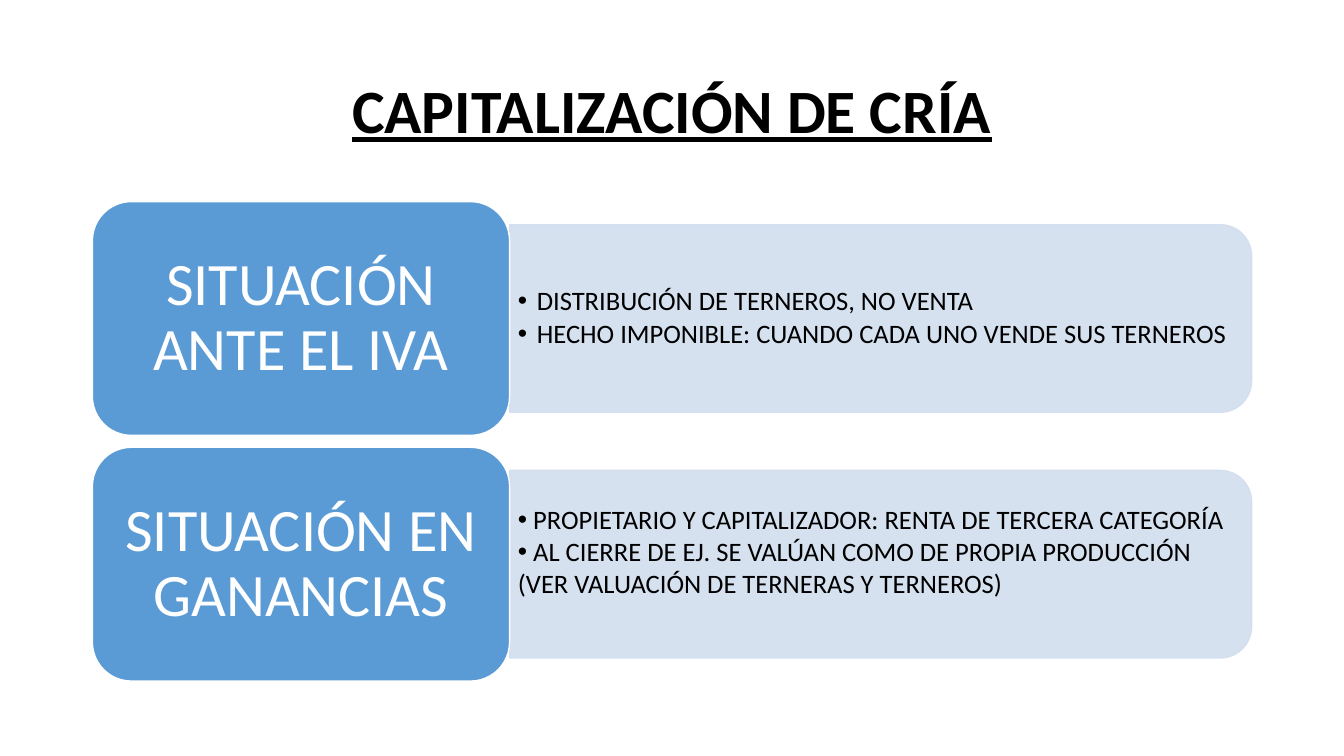
from pptx import Presentation
from pptx.dml.color import RGBColor
from pptx.enum.shapes import MSO_SHAPE
from pptx.enum.text import MSO_ANCHOR, PP_ALIGN
from pptx.util import Pt
from lxml.etree import SubElement
from pptx.oxml.ns import qn

BLACK = RGBColor(0x00, 0x00, 0x00)
WHITE = RGBColor(0xFF, 0xFF, 0xFF)
BLUE = RGBColor(0x5B, 0x9B, 0xD5)
PALE_BLUE = RGBColor(0xD2, 0xDE, 0xEF)

LABEL_LEFT, LABEL_TOP, LABEL_WIDTH, LABEL_HEIGHT = 66, 144, 298, 167
ROW_PITCH = 175.5
PANEL_WIDTH, PANEL_HEIGHT = 530, 134
PANEL_LEFT = LABEL_LEFT + LABEL_WIDTH
DETAIL_WIDTH, DETAIL_HEIGHT = 523.5, 121

# label, details, hanging indent, line spacing, space after, bottom inset
ROWS = [
    ("SITUACIÓN ANTE EL IVA",
     ["DISTRIBUCIÓN DE TERNEROS, NO VENTA",
      "HECHO IMPONIBLE: CUANDO CADA UNO VENDE SUS TERNEROS"],
     13.5, 0.9, 2.85, 3),
    ("SITUACIÓN EN GANANCIAS",
     [" PROPIETARIO Y CAPITALIZADOR: RENTA DE TERCERA CATEGORÍA",
      " AL CIERRE DE EJ. SE VALÚAN COMO DE PROPIA PRODUCCIÓN "
      "(VER VALUACIÓN DE TERNERAS Y TERNEROS)"],
     0, 1.0, 0, 22),
]


def style_text(paragraph, size, color):
    paragraph.font.name = "Calibri"
    paragraph.font.size = Pt(size)
    paragraph.font.color.rgb = color


def set_insets(frame, side, top, bottom):
    frame.word_wrap = True
    frame.vertical_anchor = MSO_ANCHOR.MIDDLE
    frame.margin_left = frame.margin_right = Pt(side)
    frame.margin_top, frame.margin_bottom = Pt(top), Pt(bottom)


presentation = Presentation()
presentation.slide_width, presentation.slide_height = Pt(960), Pt(540)
slide = presentation.slides.add_slide(presentation.slide_layouts[6])

# Title
title = slide.shapes.add_textbox(Pt(66), Pt(28.75), Pt(828), Pt(104.4))
set_insets(title.text_frame, 7.2, 3.6, 3.6)
heading = title.text_frame.paragraphs[0]
heading.text = "CAPITALIZACIÓN DE CRÍA"
heading.alignment = PP_ALIGN.CENTER
heading.line_spacing = 0.9
style_text(heading, 44, BLACK)
heading.font.bold = heading.font.underline = True

for row, (topic, points, indent, spacing, after, bottom) in enumerate(ROWS):
    top = LABEL_TOP + row * ROW_PITCH
    middle = top + LABEL_HEIGHT / 2

    # Pale panel, turned so that its rounded corners face right
    panel = slide.shapes.add_shape(
        MSO_SHAPE.ROUND_2_SAME_RECTANGLE,
        Pt(PANEL_LEFT + (PANEL_WIDTH - PANEL_HEIGHT) / 2),
        Pt(middle - PANEL_WIDTH / 2), Pt(PANEL_HEIGHT), Pt(PANEL_WIDTH))
    panel.rotation = 90
    panel.shadow.inherit = False
    panel.line.width = Pt(1)
    for paint in (panel.fill, panel.line.fill):
        paint.solid()
        paint.fore_color.rgb = PALE_BLUE
    for color in panel._element.spPr.iter(qn("a:srgbClr")):
        SubElement(color, qn("a:alpha"), val="90000")

    # Bulleted details
    details = slide.shapes.add_textbox(
        Pt(PANEL_LEFT), Pt(middle - DETAIL_HEIGHT / 2),
        Pt(DETAIL_WIDTH), Pt(DETAIL_HEIGHT))
    frame = details.text_frame
    set_insets(frame, 6, 3, bottom)
    for number, point in enumerate(points):
        item = frame.add_paragraph() if number else frame.paragraphs[0]
        item.text = point
        item.line_spacing = spacing
        item.space_after = Pt(after)
        style_text(item, 19, BLACK)
        properties = item._p.get_or_add_pPr()
        properties.set("marL", str(Pt(indent)))
        properties.set("indent", str(-Pt(indent)))
        SubElement(properties, qn("a:buFont"), typeface="Arial")
        SubElement(properties, qn("a:buChar"), char="•")
        # Bullet settings precede the default run settings
        properties.append(properties.find(qn("a:defRPr")))

    # Blue label
    label = slide.shapes.add_shape(
        MSO_SHAPE.ROUNDED_RECTANGLE, Pt(LABEL_LEFT), Pt(top),
        Pt(LABEL_WIDTH), Pt(LABEL_HEIGHT))
    label.shadow.inherit = False
    label.fill.solid()
    label.fill.fore_color.rgb = BLUE
    label.line.color.rgb = WHITE
    label.line.width = Pt(1)
    set_insets(label.text_frame, 13, 6.5, 6.5)
    caption = label.text_frame.paragraphs[0]
    caption.text = topic
    caption.alignment = PP_ALIGN.CENTER
    caption.line_spacing = 0.9
    style_text(caption, 43, WHITE)

presentation.save("out.pptx")
